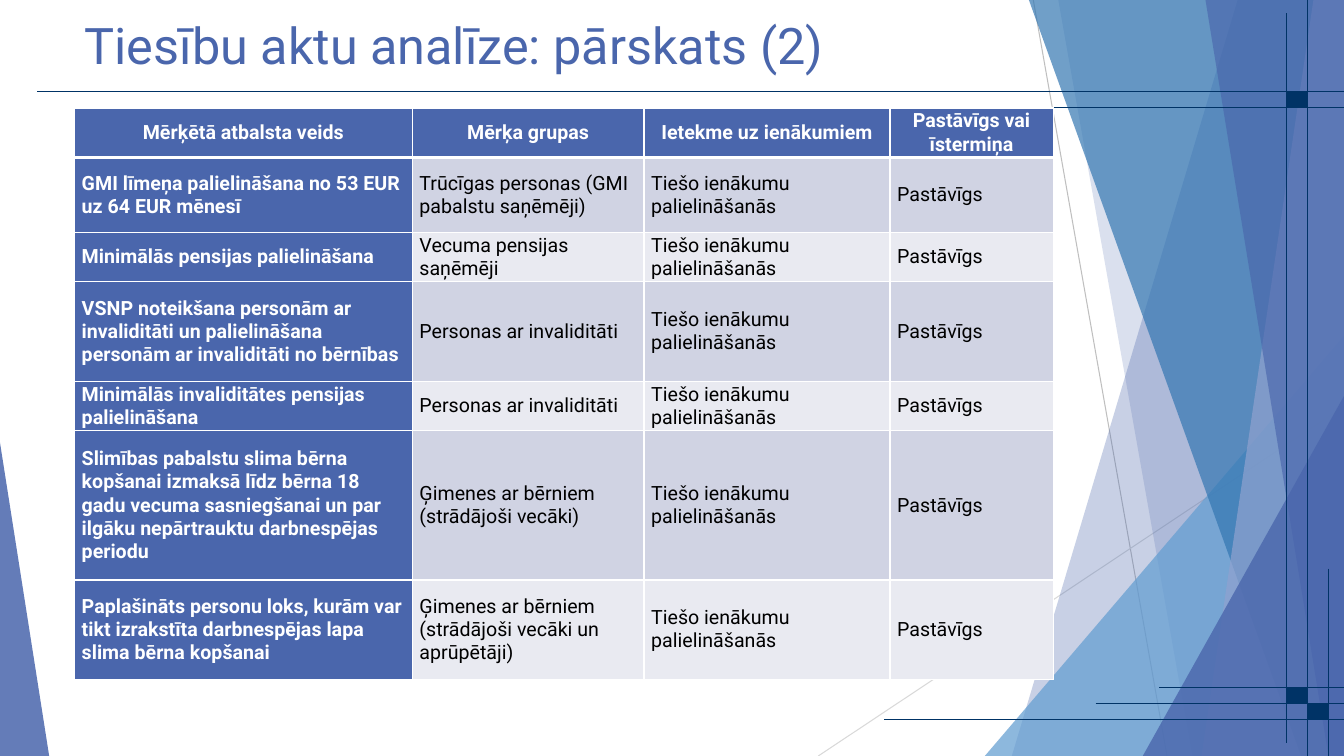
from lxml import etree
from pptx import Presentation
from pptx.dml.color import RGBColor
from pptx.enum.shapes import MSO_CONNECTOR, MSO_SHAPE
from pptx.enum.text import MSO_ANCHOR, PP_ALIGN
from pptx.oxml.ns import qn
from pptx.util import Cm, Pt

LINE = MSO_CONNECTOR.STRAIGHT
RECT = MSO_SHAPE.RECTANGLE
WEDGE = MSO_SHAPE.ISOSCELES_TRIANGLE
MIDDLE = MSO_ANCHOR.MIDDLE
LEFT, CENTER = PP_ALIGN.LEFT, PP_ALIGN.CENTER


class Theme:
    font = "Roboto"
    title, body = Pt(36), Pt(14)
    rule = Pt(0.75)
    blue, sky, deep, mist = "4A66AC", "629DD1", "3477B2", "90A2CF"
    navy, white, black = "003366", "FFFFFF", "000000"
    gray, pale = "BFBFBF", "D9D9D9"
    bands = "E9EAF1", "D0D3E3"


WIDE, HIGH = 33.87, 19.05
deck = Presentation()
deck.slide_width, deck.slide_height = Cm(WIDE), Cm(HIGH)
slide = deck.slides.add_slide(deck.slide_layouts[5])
shapes = slide.shapes


def rule(x1, y1, x2, y2, color):
    line = shapes.add_connector(LINE, Cm(x1), Cm(y1), Cm(x2), Cm(y2))
    line.line.color.rgb = RGBColor.from_string(color)
    line.line.width = Theme.rule
    etree.SubElement(line._element.spPr, qn("a:effectLst"))


def paint(shape, color, alpha=100):
    """Fill a shape without outline or shadow; alpha is opacity in percent."""
    shape.shadow.inherit = False
    shape.fill.solid()
    shape.fill.fore_color.rgb = RGBColor.from_string(color)
    shape.line.fill.background()
    if alpha < 100:
        tint = shape._element.spPr.find(qn("a:solidFill"))[0]
        etree.SubElement(tint, qn("a:alpha")).set("val", str(alpha * 1000))


# Backdrop: bands run from a top x to a foot x and fill to the right edge;
# wedges give left, top, width and apex, and stand on the bottom edge.
rule(26.04, 0, 29.41, HIGH, Theme.gray)
rule(WIDE, 10.24, 20.62, HIGH, Theme.pale)
panels = [
    ((31.19, 25.5), Theme.blue, 30),
    ((26.67, 30.05), Theme.blue, 20),
    ((24.82, 8.46, 9.05, 1), Theme.sky, 72),
    ((25.93, 32.79), Theme.deep, 70),
    ((33.1, 30.28), Theme.mist, 70),
    ((30.38, 33.48), Theme.blue, 65),
    ((28.8, 9.98, 5.07, 1), Theme.blue, 80),
    ((0, 11.15, 1.24, 0), Theme.blue, 85),
]
for form, color, alpha in panels:
    if len(form) == 2:
        top, foot = form
        pen = shapes.build_freeform(Cm(top), 0)
        pen.add_line_segments([(Cm(WIDE), 0), (Cm(WIDE), Cm(HIGH)), (Cm(foot), Cm(HIGH))])
        panel = pen.convert_to_shape()
    else:
        x, y, width, apex = form
        panel = shapes.add_shape(WEDGE, Cm(x), Cm(y), Cm(width), Cm(HIGH - y))
        panel.adjustments[0] = apex
    paint(panel, color, alpha)

# Navy rules and the small blocks at their crossings
for x, y in [(0.94, 2.31), (2.01, 2.72), (27.61, 17.73), (29.21, 17.32), (22.28, 18.14)]:
    rule(x, y, WIDE, y, Theme.navy)
for x, y, end in [(32.94, 0, HIGH), (32.41, 0.33, 18.72), (33.48, 14.33, HIGH)]:
    rule(x, y, x, end, Theme.navy)
for x, y in [(32.41, 2.31), (32.41, 17.32), (32.94, 17.73)]:
    paint(shapes.add_shape(RECT, Cm(x), Cm(y), Cm(0.53), Cm(0.41)), Theme.navy)

# Title
title = shapes.title
title.left, title.top, title.width, title.height = Cm(1.88), Cm(0.1), Cm(23.88), Cm(2.21)
title.text_frame.text = "Tiesību aktu analīze: pārskats (2)"
title.text_frame.vertical_anchor = MIDDLE
head = title.text_frame.paragraphs[0]
head.alignment = LEFT
head.line_spacing = 0.9
head.font.name, head.font.size = Theme.font, Theme.title
head.font.color.rgb = RGBColor.from_string(Theme.blue)

# Table
effect, term = "Tiešo ienākumu palielināšanās", "Pastāvīgs"
rows = [
    ("Mērķētā atbalsta veids", "Mērķa grupas", "Ietekme uz ienākumiem",
     "Pastāvīgs vai īstermiņa"),
    ("GMI līmeņa palielināšana no 53 EUR uz 64 EUR mēnesī",
     "Trūcīgas personas (GMI pabalstu saņēmēji)", effect, term),
    ("Minimālās pensijas palielināšana", "Vecuma pensijas saņēmēji", effect, term),
    ("VSNP noteikšana personām ar invaliditāti un palielināšana personām ar "
     "invaliditāti no bērnības", "Personas ar invaliditāti", effect, term),
    ("Minimālās invaliditātes pensijas palielināšana", "Personas ar invaliditāti",
     effect, term),
    ("Slimības pabalstu slima bērna kopšanai izmaksā līdz bērna 18 gadu vecuma "
     "sasniegšanai un par ilgāku nepārtrauktu darbnespējas periodu",
     "Ģimenes ar bērniem\n(strādājoši vecāki)", effect, term),
    ("Paplašināts personu loks, kurām var tikt izrakstīta darbnespējas lapa slima "
     "bērna kopšanai", "Ģimenes ar bērniem\n(strādājoši vecāki un aprūpētāji)",
     effect, term),
]
widths = [8.51, 5.84, 6.2, 4.11]
units = [2, 3, 2, 4, 2, 6, 4]
tall = 14.4
frame = shapes.add_table(len(rows), len(widths), Cm(1.88), Cm(2.72),
                         Cm(sum(widths)), Cm(tall))
table = frame.table
for col, width in zip(table.columns, widths):
    col.width = Cm(width)
for row, unit in zip(table.rows, units):
    row.height = Cm(tall * unit / sum(units))

for r, texts in enumerate(rows):
    for c, text in enumerate(texts):
        cell = table.cell(r, c)
        strong = r == 0 or c == 0
        cell.text_frame.text = text
        cell.vertical_anchor = MIDDLE
        cell.margin_left = cell.margin_right = Cm(0.18)
        cell.margin_top = cell.margin_bottom = 0
        for side in ("lnL", "lnR", "lnT", "lnB"):
            thick = (r, side) in [(0, "lnB"), (1, "lnT")]
            edge = etree.SubElement(cell._tc.get_or_add_tcPr(), qn("a:" + side))
            edge.set("w", str(Pt(3 if thick else 1)))
            ink = etree.SubElement(edge, qn("a:solidFill"))
            etree.SubElement(ink, qn("a:srgbClr")).set("val", Theme.white)
        cell.fill.solid()
        shade = Theme.blue if strong else Theme.bands[r % 2]
        cell.fill.fore_color.rgb = RGBColor.from_string(shade)
        for para in cell.text_frame.paragraphs:
            para.alignment = CENTER if r == 0 else LEFT
            font = para.runs[0].font
            font.name, font.size, font.bold = Theme.font, Theme.body, strong
            font.color.rgb = RGBColor.from_string(Theme.white if strong else Theme.black)

deck.save("out.pptx")
